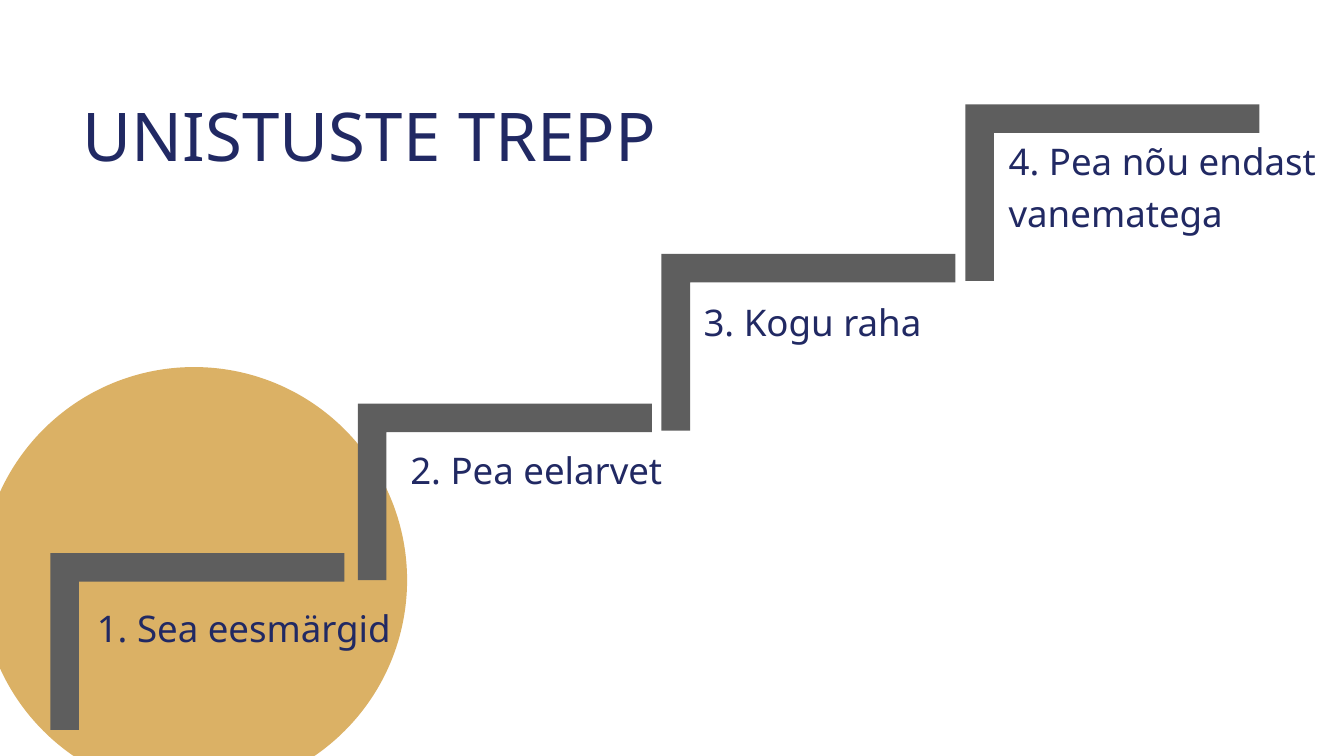
from pptx import Presentation
from pptx.dml.color import RGBColor
from pptx.enum.shapes import MSO_SHAPE
from pptx.enum.text import MSO_ANCHOR, MSO_AUTO_SIZE, PP_ALIGN
from pptx.util import Cm, Pt

# Content: label, its left and top, and the left edge of its stair (cm)
TITLE = "UNISTUSTE TREPP"
STEPS = [
    ("1. Sea eesmärgid", 2.34, 14.88, 1.27),
    ("2. Pea eelarvet", 10.24, 10.9, 9.02),
    ("3. Kogu raha", 17.63, 7.16, 16.67),
    ("4. Pea nõu endast vanematega", 25.32, 3.76, 24.33),
]

FONT = "Noto Sans"
NAVY = RGBColor(0x21, 0x29, 0x63)
GOLD = RGBColor(0xDB, 0xB1, 0x65)
GREY = RGBColor(0x5E, 0x5E, 0x5E)

# Stair geometry (cm)
FIRST_TOP, RISE = 13.94, 3.77
TREAD, RISER, THICK = 7.41, 4.45, 0.72


def paint(shape, color):
    shape.shadow.inherit = False
    shape.fill.solid()
    shape.fill.fore_color.rgb = color
    shape.line.fill.background()


def write(frame, text, size, spacing, anchor):
    frame.text = text
    frame.word_wrap = True
    frame.auto_size = MSO_AUTO_SIZE.NONE
    frame.vertical_anchor = anchor
    paragraph = frame.paragraphs[0]
    paragraph.alignment = PP_ALIGN.LEFT
    paragraph.line_spacing = spacing
    paragraph.font.name = FONT
    paragraph.font.size = Pt(size)
    paragraph.font.color.rgb = NAVY


def add_stair(shapes, left, top):
    right, bottom = left + TREAD, top + RISER
    corners = [
        (right, top), (right, top + THICK), (left + THICK, top + THICK),
        (left + THICK, bottom), (left, bottom), (left, top),
    ]
    points = [(Cm(x), Cm(y)) for x, y in corners]
    outline = shapes.build_freeform(*points[0])
    outline.add_line_segments(points[1:], close=True)
    paint(outline.convert_to_shape(), GREY)


def add_label(shapes, text, left, top):
    label = shapes.add_textbox(Cm(left), Cm(top), Cm(9.96), Cm(1.68)).text_frame
    label.margin_left = label.margin_right = Cm(0.1)
    label.margin_top = label.margin_bottom = Cm(0.1)
    write(label, text, 26.2, 1.2, MSO_ANCHOR.MIDDLE)


def main():
    deck = Presentation()
    deck.slide_width, deck.slide_height = Cm(33.87), Cm(19.05)
    slide = deck.slides.add_slide(deck.slide_layouts[5])
    shapes = slide.shapes

    # Title
    title = shapes.title
    title.left, title.top = Cm(1.83), Cm(2.49)
    title.width, title.height = Cm(23.24), Cm(4.22)
    write(title.text_frame, TITLE, 48, 0.9, MSO_ANCHOR.TOP)

    # Sun behind the first stair
    sun = shapes.add_shape(MSO_SHAPE.OVAL, Cm(-0.48), Cm(9.25), Cm(10.74), Cm(10.74))
    paint(sun, GOLD)

    # Stairs with their labels
    for i, (text, label_left, label_top, stair_left) in enumerate(STEPS):
        add_stair(shapes, stair_left, FIRST_TOP - i * RISE)
        add_label(shapes, text, label_left, label_top)

    deck.save("out.pptx")


if __name__ == "__main__":
    main()
